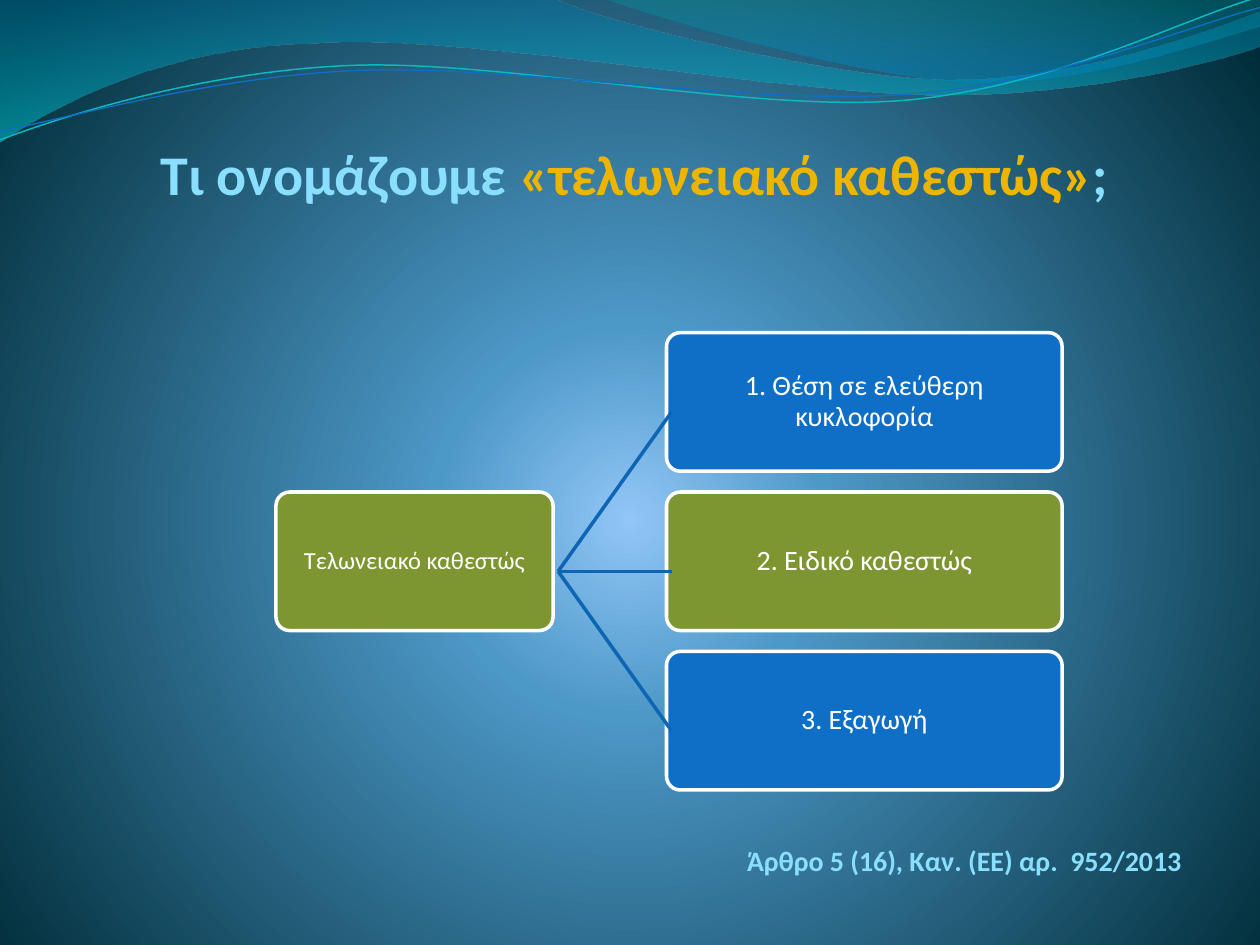
from math import cos, radians, sin

from lxml import etree
from pptx import Presentation
from pptx.dml.color import RGBColor
from pptx.enum.shapes import MSO_CONNECTOR, MSO_SHAPE
from pptx.enum.text import MSO_ANCHOR as ANCHOR, MSO_AUTO_SIZE, PP_ALIGN as ALIGN
from pptx.oxml.ns import qn
from pptx.util import Inches, Pt

THEME = {
    "font": "Calibri",
    "title_size": 32, "box_size": 16, "root_size": 14, "caption_size": 16,
    "sky": "8ADFFF", "gold": "EEB500", "white": "FFFFFF",
    "blue": "0F6FC6", "green": "7E9632", "link": "0E65B4", "teal": "0AB8BF",
    # gradient stops: position %, colour, opacity %
    "backdrop": [(0, "91C6F7", 100), (25, "4C98C7", 100), (100, "002C38", 100)],
    "wide_wave": [(0, "0074A1", 45), (100, "00C6CF", 55)],
    "short_wave": [(0, "00A1A9", 30), (80, "008BBF", 45)],
}

TITLE = [("Τι ονομάζουμε ", "sky"), ("«τελωνειακό καθεστώς»", "gold"), (";", "sky")]
CAPTION = [("Άρθρο 5 (16), Καν. (ΕΕ) αρ.  952/2013", "sky")]
ROOT = ("Τελωνειακό καθεστώς", "green")
REGIMES = [
    ("1. Θέση σε ελεύθερη κυκλοφορία", "blue"),
    ("2. Ειδικό καθεστώς", "green"),
    ("3. Εξαγωγή", "blue"),
]

# Outlines in inches: a pair is a straight step, six numbers are a Bézier curve.
WAVES = [
    ("wide_wave", [(0, 0), (4.4, -0.01), (4.76, 0.17, 6.64, 0.63, 7.58, 0.63),
                   (8.53, 0.63, 9.58, 0.26, 10, 0.09), (10.01, 0.36),
                   (9.83, 0.44, 8.7, 0.76, 7.46, 0.75),
                   (6.22, 0.75, 3.82, 0.28, 2.57, 0.34),
                   (1.29, 0.36, 0.46, 0.83, -0.01, 1.13)]),
    ("short_wave", [(4.79, -0.01), (5.09, 0.11, 6.82, 0.62, 7.69, 0.65),
                    (8.56, 0.69, 9.61, 0.32, 10, 0.21), (10, 0)]),
]
# Colour, width, centre of the tilt, outline as it lies on the slide.
WAVE_LINES = [
    ("teal", 0.85, (4.99, 0.58),
     [(0, 1.11), (0.48, 0.93, 1.58, 0.57, 2.77, 0.52),
      (3.95, 0.47, 5.93, 0.89, 7.13, 0.8), (8.33, 0.71, 9.38, 0.15, 9.98, -0.02)]),
    ("blue", 0.75, (5, 0.59),
     [(0, 1.04), (0.47, 0.96, 1.64, 0.61, 2.83, 0.56),
      (4.03, 0.51, 5.97, 0.84, 7.17, 0.75), (8.36, 0.67, 9.41, 0.21, 10, 0.06)]),
]
TILT = -2.7

BOX_H, BOX_TOP, BOX_STEP = 1.1, 2.64, 1.265
BOX_LEFT, BOX_W = 5.29, 3.14
ROOT_LEFT, ROOT_W = 2.19, 2.2
LINK_OVERLAP, LINK_DROP = 0.04, 0.08


def rgb(name):
    return RGBColor.from_string(THEME[name])


def write(sp, runs, *, size, align=ALIGN.CENTER, anchor=ANCHOR.MIDDLE,
          bold=False, spacing=None, inset=0):
    tf = sp.text_frame
    tf.word_wrap = True
    tf.auto_size = MSO_AUTO_SIZE.NONE
    tf.vertical_anchor = anchor
    tf.margin_left = tf.margin_right = Inches(inset)
    tf.margin_top = tf.margin_bottom = 0
    p = tf.paragraphs[0]
    p.alignment = align
    if spacing:
        p.line_spacing = spacing
    for text, color in runs:
        r = p.add_run()
        r.text = text
        r.font.name = THEME["font"]
        r.font.size = Pt(THEME[size])
        r.font.bold = bold
        r.font.color.rgb = rgb(color)


def set_gradient(owner, element, stops, center=None):
    """Fill top to bottom, or outwards in circles when a centre rectangle is given."""
    owner.fill.solid()
    solid = element.find(".//" + qn("a:solidFill"))
    grad = etree.Element(qn("a:gradFill"), rotWithShape="1")
    gs_list = etree.SubElement(grad, qn("a:gsLst"))
    for pos, color, opacity in stops:
        gs = etree.SubElement(gs_list, qn("a:gs"), pos=str(pos * 1000))
        clr = etree.SubElement(gs, qn("a:srgbClr"), val=color)
        if opacity < 100:
            etree.SubElement(clr, qn("a:alpha"), val=str(opacity * 1000))
    if center:
        ring = etree.SubElement(grad, qn("a:path"), {"path": "circle"})
        sides = {side: str(v * 1000) for side, v in zip("ltrb", center)}
        etree.SubElement(ring, qn("a:fillToRect"), sides)
    else:
        etree.SubElement(grad, qn("a:lin"), ang="5400000", scaled="1")
    solid.getparent().replace(solid, grad)


def pairs(step):
    return list(zip(step[::2], step[1::2]))


def untilt(outline, center):
    """Turn an outline back, so that the shape's own rotation restores it."""
    cx, cy = center
    c, s = cos(radians(-TILT)), sin(radians(-TILT))
    return [[v for x, y in pairs(step)
             for v in (cx + (x - cx) * c - (y - cy) * s,
                       cy + (x - cx) * s + (y - cy) * c)]
            for step in outline]


def add_outline(s, outline, close):
    """Draw through the end points, then bend the steps that are curves."""
    ends = [(Inches(step[-2]), Inches(step[-1])) for step in outline]
    builder = s.shapes.build_freeform(*ends[0])
    builder.add_line_segments(ends[1:], close=close)
    sp = builder.convert_to_shape()
    sp.shadow.inherit = False
    straights = list(sp.element.iter(qn("a:lnTo")))
    for straight, step in zip(straights, outline[1:]):
        if len(step) == 6:
            curve = etree.Element(qn("a:cubicBezTo"))
            for x, y in pairs(step):
                etree.SubElement(curve, qn("a:pt"), x=str(Inches(x) - sp.left),
                                 y=str(Inches(y) - sp.top))
            straight.getparent().replace(straight, curve)
    return sp


def add_box(s, left, top, width, text, color, *, size, inset):
    sp = s.shapes.add_shape(MSO_SHAPE.ROUNDED_RECTANGLE, Inches(left), Inches(top),
                            Inches(width), Inches(BOX_H))
    sp.adjustments[0] = 0.1
    sp.shadow.inherit = False
    sp.fill.solid()
    sp.fill.fore_color.rgb = rgb(color)
    sp.line.color.rgb = rgb("white")
    sp.line.width = Pt(2)
    write(sp, [(text, "white")], size=size, spacing=0.9, inset=inset)


def add_link(s, x1, y1, x2, y2):
    line = s.shapes.add_connector(MSO_CONNECTOR.STRAIGHT, Inches(x1), Inches(y1),
                                  Inches(x2), Inches(y2))
    line.line.color.rgb = rgb("link")
    line.line.width = Pt(2)
    etree.SubElement(line.element.spPr, qn("a:effectLst"))


def add_waves(s):
    for stops, outline in WAVES:
        sp = add_outline(s, outline, close=True)
        sp.line.fill.background()
        set_gradient(sp, sp.element, THEME[stops])
    for color, width, center, outline in WAVE_LINES:
        sp = add_outline(s, untilt(outline, center), close=False)
        sp.rotation = TILT
        sp.fill.background()
        sp.line.color.rgb = rgb(color)
        sp.line.width = Pt(width)


def add_diagram(s):
    tops = [BOX_TOP + i * BOX_STEP for i in range(len(REGIMES))]
    root_top = (tops[0] + tops[-1]) / 2
    add_box(s, ROOT_LEFT, root_top, ROOT_W, *ROOT, size="root_size", inset=0.01)
    for top, (text, color) in zip(tops, REGIMES):
        add_box(s, BOX_LEFT, top, BOX_W, text, color, size="box_size", inset=0.03)
    drop = BOX_H / 2 + LINK_DROP
    for top in tops:
        add_link(s, ROOT_LEFT + ROOT_W + LINK_OVERLAP, root_top + drop,
                 BOX_LEFT + LINK_OVERLAP, top + drop)


def main():
    prs = Presentation()
    prs.slide_width, prs.slide_height = Inches(10), Inches(7.5)
    s = prs.slides.add_slide(prs.slide_layouts[5])
    set_gradient(s.background, s.element, THEME["backdrop"], center=(10, 110, 10, 100))
    add_waves(s)

    title = s.shapes.title
    title.left, title.top = Inches(0.62), Inches(0.94)
    title.width, title.height = Inches(8.83), Inches(0.7)
    write(title, TITLE, size="title_size", anchor=ANCHOR.BOTTOM, bold=True)

    add_diagram(s)

    caption = s.shapes.add_textbox(Inches(5.63), Inches(5.94), Inches(3.75), Inches(1.02))
    write(caption, CAPTION, size="caption_size", align=ALIGN.RIGHT,
          anchor=ANCHOR.BOTTOM, bold=True, spacing=1.5)
    prs.save("out.pptx")


if __name__ == "__main__":
    main()
